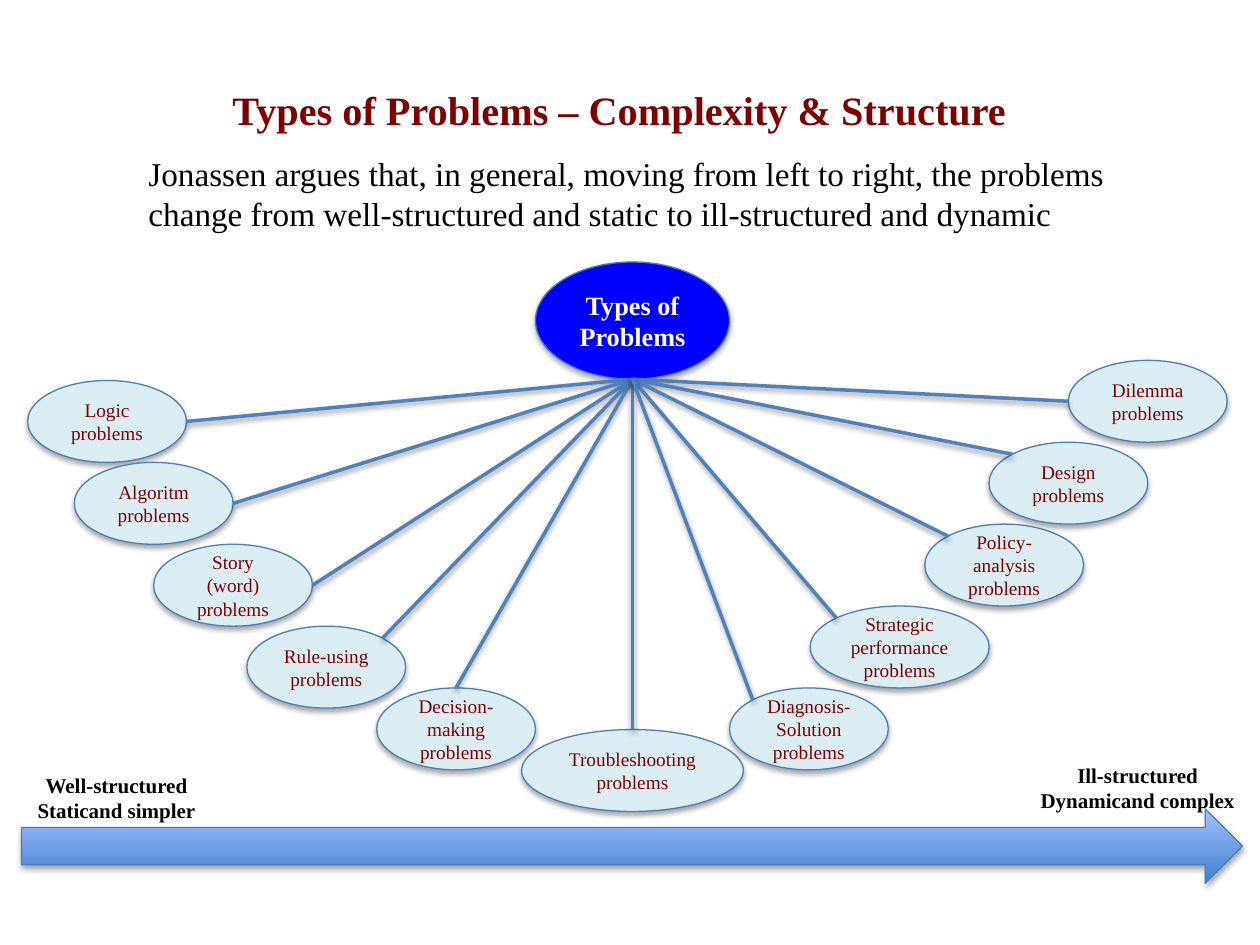
from dataclasses import dataclass
from math import sqrt

from pptx import Presentation
from pptx.dml.color import RGBColor
from pptx.enum.shapes import MSO_CONNECTOR, MSO_SHAPE
from pptx.enum.text import MSO_ANCHOR, MSO_AUTO_SIZE, PP_ALIGN
from pptx.util import Inches, Pt

STRAIGHT = MSO_CONNECTOR.STRAIGHT
ELLIPSE, RIGHT_ARROW = MSO_SHAPE.OVAL, MSO_SHAPE.RIGHT_ARROW
MIDDLE = MSO_ANCHOR.MIDDLE
NO_AUTOFIT = MSO_AUTO_SIZE.NONE
LEFT, CENTER = PP_ALIGN.LEFT, PP_ALIGN.CENTER


@dataclass(frozen=True)
class Theme:
    """Colours, typeface and type sizes of the slide."""
    font: str = "Times New Roman"
    maroon: RGBColor = RGBColor(0x80, 0x00, 0x00)
    black: RGBColor = RGBColor(0x00, 0x00, 0x00)
    white: RGBColor = RGBColor(0xFF, 0xFF, 0xFF)
    hub: RGBColor = RGBColor(0x00, 0x00, 0xFF)
    node: RGBColor = RGBColor(0xDB, 0xEE, 0xF4)
    outline: RGBColor = RGBColor(0x4B, 0x7E, 0xBC)
    link: RGBColor = RGBColor(0x4F, 0x81, 0xBD)
    title_size: int = 23
    intro_size: int = 19
    hub_size: int = 15
    label_size: int = 12
    node_size: int = 11
    outline_width: float = 0.75
    link_width: float = 2


THEME = Theme()

NODE_WIDTH, NODE_HEIGHT = 1.26, 0.65
DIAGONAL = sqrt(0.5)
SITES = {
    "top": (0, -1),
    "right": (1, 0),
    "left": (-1, 0),
    "top right": (DIAGONAL, -DIAGONAL),
    "top left": (-DIAGONAL, -DIAGONAL),
}

LEFT_ARM = [
    ("Logic problems", 0, NODE_WIDTH, "right"),
    ("Algoritm problems", 0.37, NODE_WIDTH, "right"),
    ("Story (word) problems", 1, NODE_WIDTH, "right"),
    ("Rule-using problems", 1.74, NODE_WIDTH, "top right"),
]
MIDDLE_NODES = [
    ("Decision-making problems", (2.99, 5.46, NODE_WIDTH, NODE_HEIGHT), "top"),
    ("Troubleshooting problems", (4.14, 5.79, 1.76, NODE_HEIGHT), "top"),
]
RIGHT_ARM = [
    ("Dilemma problems", 2.69, NODE_WIDTH, "left"),
    ("Design problems", 2.06, NODE_WIDTH, "top left"),
    ("Policy-analysis problems", 1.55, NODE_WIDTH, "top left"),
    ("Strategic performance problems", 0.64, 1.42, "top left"),
    ("Diagnosis-Solution problems", 0, NODE_WIDTH, "top left"),
]


def inches(*values):
    """Convert plain numbers to lengths."""
    return [Inches(value) for value in values]


def write(text_frame, text, size, color, bold=False, alignment=CENTER):
    """Fill a text frame and format all of its runs."""
    text_frame.word_wrap = True
    text_frame.text = text
    for paragraph in text_frame.paragraphs:
        paragraph.alignment = alignment
        for run in paragraph.runs:
            run.font.name = THEME.font
            run.font.size = Pt(size)
            run.font.bold = bold
            run.font.color.rgb = color


def add_title(slide, box):
    """Place the slide title in its placeholder."""
    title = slide.shapes.title
    title.left, title.top, title.width, title.height = inches(*box)
    write(title.text_frame, "Types of Problems – Complexity & Structure",
          THEME.title_size, THEME.maroon, bold=True)
    title.text_frame.auto_size = NO_AUTOFIT


def add_text(slide, box, text, size, bold=False, alignment=CENTER):
    """Add a black text box."""
    shape = slide.shapes.add_textbox(*inches(*box))
    write(shape.text_frame, text, size, THEME.black, bold, alignment)


def outline(shape):
    """Give a shape the thin blue outline."""
    shape.line.color.rgb = THEME.outline
    shape.line.width = Pt(THEME.outline_width)


def add_ellipse(slide, box, text, fill, size, color, bold=False):
    """Add a filled ellipse with centred text."""
    shape = slide.shapes.add_shape(ELLIPSE, *inches(*box))
    shape.fill.solid()
    shape.fill.fore_color.rgb = fill
    outline(shape)
    shape.text_frame.vertical_anchor = MIDDLE
    write(shape.text_frame, text, size, color, bold)


def arm_nodes(left, top, entries):
    """Stack the nodes of one arm in touching rows."""
    return [(text, (left + offset, top + row * NODE_HEIGHT, width, NODE_HEIGHT), site)
            for row, (text, offset, width, site) in enumerate(entries)]


def add_link(slide, box, site, target):
    """Draw a line from a site on a node's rim to the target point."""
    left, top, width, height = box
    across, down = SITES[site]
    start = (left + width / 2 * (1 + across), top + height / 2 * (1 + down))
    link = slide.shapes.add_connector(STRAIGHT, *inches(*start, *target))
    link.line.color.rgb = THEME.link
    link.line.width = Pt(THEME.link_width)


def add_fan(slide, hub_box):
    """Draw the hub, the problem types around it and their links."""
    left, top, width, height = hub_box
    hub_bottom = (left + width / 2, top + height)
    nodes = (arm_nodes(0.22, 3.02, LEFT_ARM) + MIDDLE_NODES
             + arm_nodes(5.79, 2.86, RIGHT_ARM))
    for text, box, _ in nodes:
        add_ellipse(slide, box, text, THEME.node, THEME.node_size, THEME.maroon)
    add_ellipse(slide, hub_box, "Types of Problems", THEME.hub,
                THEME.hub_size, THEME.white, bold=True)
    for _, box, site in nodes:
        add_link(slide, box, site, hub_bottom)


def add_scale(slide, box):
    """Draw the arrow from well-structured to ill-structured with its labels."""
    left, top, width, height = box
    add_text(slide, (left, top - 0.34, 1.51, 0.5),
             "Well-structured\nStaticand simpler", THEME.label_size, bold=True)
    add_text(slide, (left + width - 1.8, top - 0.42, 1.94, 0.5),
             "Ill-structured\nDynamicand complex", THEME.label_size, bold=True)
    outline(slide.shapes.add_shape(RIGHT_ARROW, *inches(left, top, width, height)))


def main():
    """Build and save the presentation."""
    presentation = Presentation()
    presentation.slide_width, presentation.slide_height = inches(10, 7.5)
    slide = presentation.slides.add_slide(presentation.slide_layouts[5])
    add_title(slide, (1.42, 0.58, 7, 0.58))
    add_text(slide, (1.08, 1.17, 8.08, 0.74),
             "Jonassen argues that, in general, moving from left to right, the problems "
             "change from well-structured and static to ill-structured and dynamic",
             THEME.intro_size, alignment=LEFT)
    add_fan(slide, (4.25, 2.08, 1.54, 0.93))
    add_scale(slide, (0.17, 6.42, 9.69, 0.59))
    presentation.save("out.pptx")


if __name__ == "__main__":
    main()
